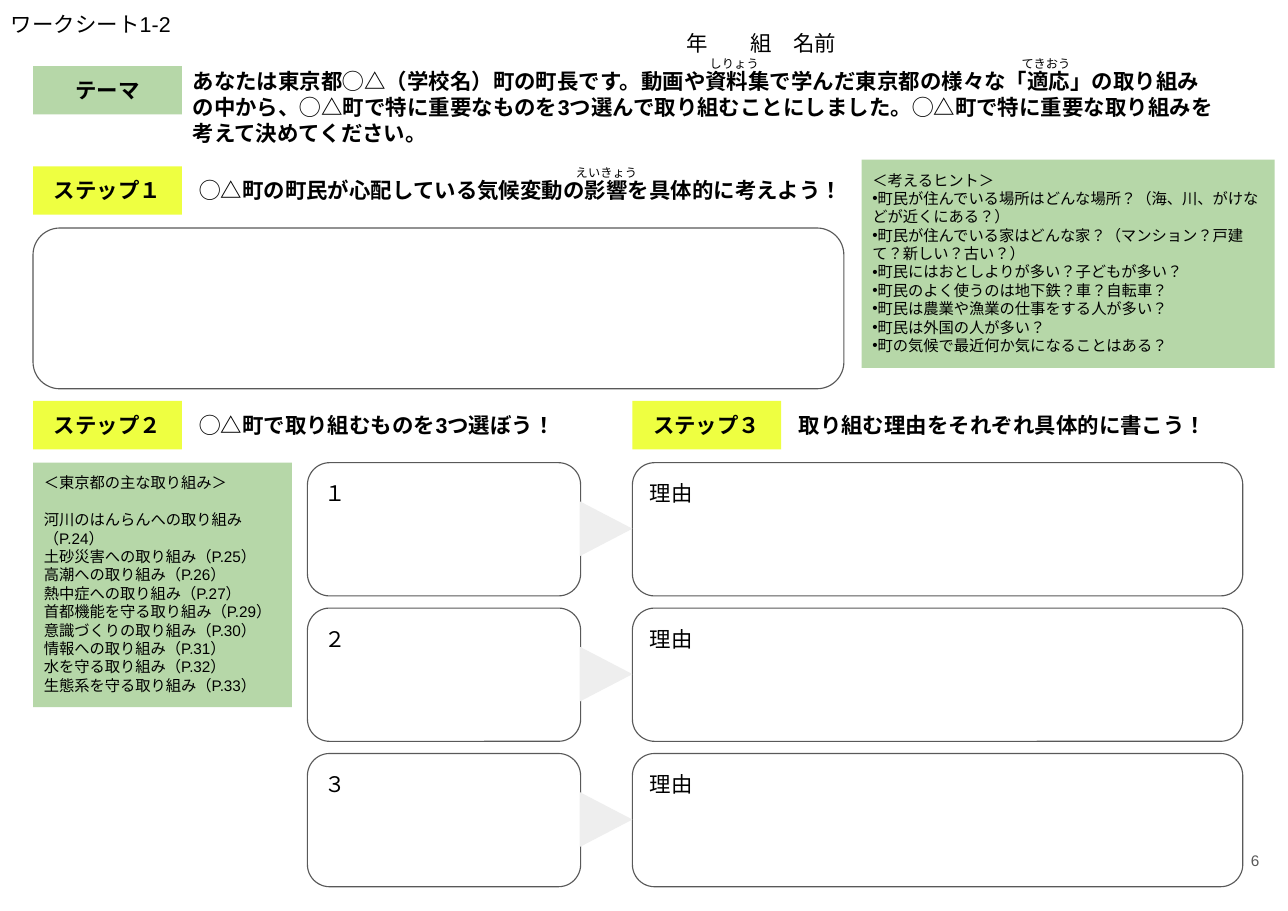
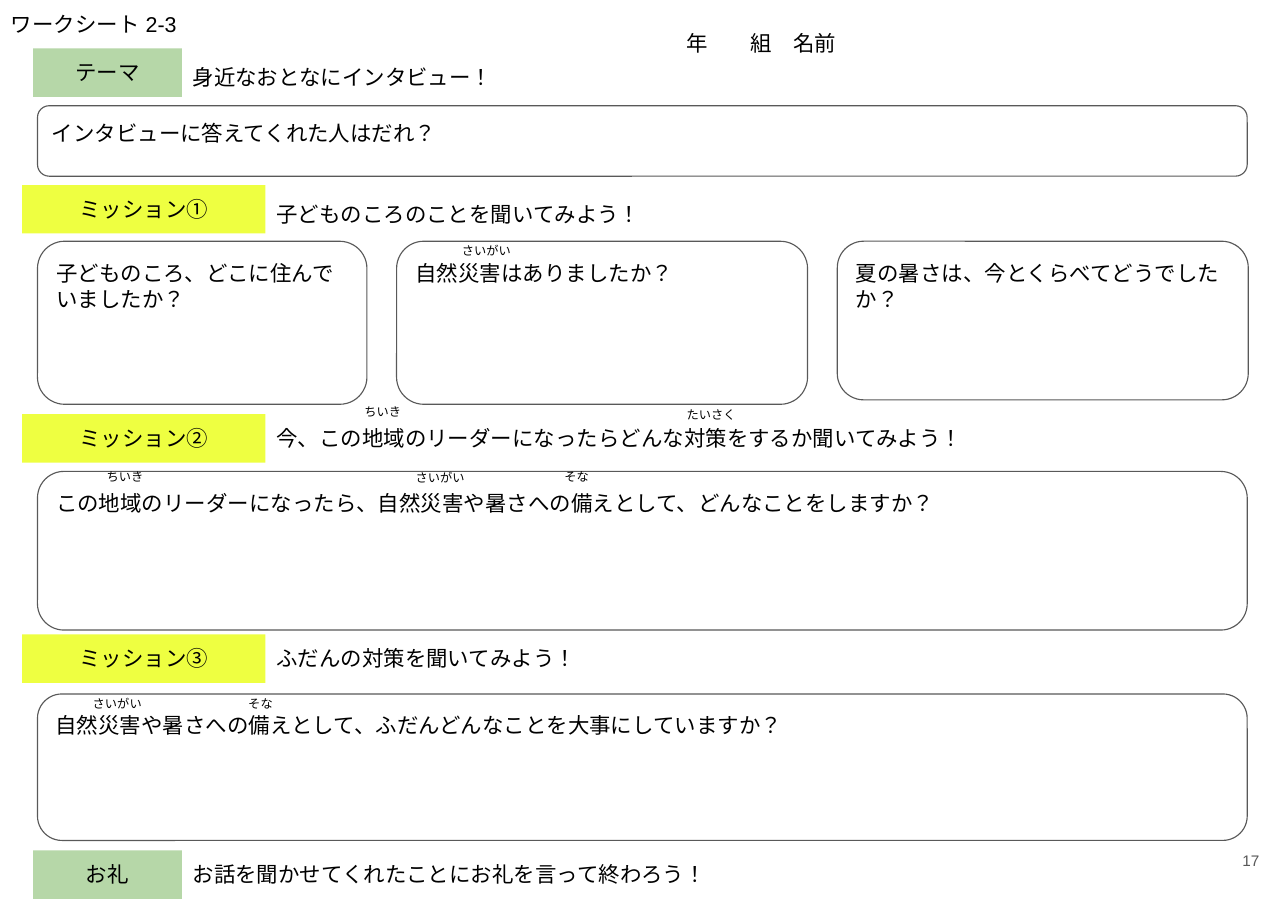
from lxml import etree
from pptx import Presentation
from pptx.dml.color import RGBColor as RGB
from pptx.enum.lang import MSO_LANGUAGE_ID as LANG
from pptx.enum.shapes import MSO_SHAPE as SHAPE
from pptx.enum.text import MSO_ANCHOR as ANCHOR, MSO_AUTO_SIZE as AUTO, PP_ALIGN as ALIGN
from pptx.oxml.ns import qn
from pptx.util import Inches, Pt

FONT = "Arial"
COLORS = {
    "paper": "FFFFFF",
    "text": "000000",
    "muted": "595959",
    "green": "B6D7A8",
    "yellow": "EEFF41",
    "arrow": "EEEEEE",
}
LINE_H = 0.44
TAG_X, TAG_W = 0.3, 1.35
MISSION_X, MISSION_W = 0.2, 2.21

HINTS = [
    "町民が住んでいる場所はどんな場所？（海、川、がけなどが近くにある？）",
    "町民が住んでいる家はどんな家？（マンション？戸建て？新しい？古い？）",
    "町民にはおとしよりが多い？子どもが多い？",
    "町民のよく使うのは地下鉄？車？自転車？",
    "町民は農業や漁業の仕事をする人が多い？",
    "町民は外国の人が多い？",
    "町の気候で最近何か気になることはある？",
]
EFFORTS = [
    "河川のはんらんへの取り組み（P.24）",
    "土砂災害への取り組み（P.25）",
    "高潮への取り組み（P.26）",
    "熱中症への取り組み（P.27）",
    "首都機能を守る取り組み（P.29）",
    "意識づくりの取り組み（P.30）",
    "情報への取り組み（P.31）",
    "水を守る取り組み（P.32）",
    "生態系を守る取り組み（P.33）",
]


def rgb(name):
    return RGB.from_string(COLORS[name])


def write(sp, lines, size=14, bold=False, align=ALIGN.LEFT, color="text",
          anchor=ANCHOR.TOP, grow=True):
    tf = sp.text_frame
    tf.word_wrap = True
    tf.auto_size = AUTO.SHAPE_TO_FIT_TEXT if grow else AUTO.NONE
    tf.vertical_anchor = anchor
    tf.margin_left = tf.margin_right = tf.margin_top = tf.margin_bottom = Inches(0.1)
    tf.text = "\n".join(lines)
    for p in tf.paragraphs:
        p.alignment = align
        p.font.name = FONT
        p.font.size = Pt(size)
        p.font.bold = bold
        p.font.color.rgb = rgb(color)
        p.font.language_id = LANG.JAPANESE
        etree.SubElement(default_font(p), qn("a:ea"), typeface=FONT)
        for r in p.runs:
            r.font.language_id = LANG.JAPANESE
    return tf.paragraphs


def default_font(p):
    return p._p.get_or_add_pPr().find(qn("a:defRPr"))


def add_bullet(p):
    pPr = p._p.get_or_add_pPr()
    pPr.set("marL", "0")
    pPr.set("indent", "0")
    default_font(p).addprevious(etree.Element(qn("a:buFont"), typeface=FONT))
    default_font(p).addprevious(etree.Element(qn("a:buChar"), char="•"))


def add_tabs(p, stops):
    tabs = etree.Element(qn("a:tabLst"))
    for stop in stops:
        etree.SubElement(tabs, qn("a:tab"), pos=str(Inches(stop)), algn="l")
    default_font(p).addprevious(tabs)


def add_text(slide, x, y, w, text, h=LINE_H, **style):
    sp = slide.shapes.add_textbox(Inches(x), Inches(y), Inches(w), Inches(h))
    return write(sp, [text], **style)


def add_shape(slide, kind, x, y, w, h, fill=None):
    sp = slide.shapes.add_shape(kind, Inches(x), Inches(y), Inches(w), Inches(h))
    sp.shadow.inherit = False
    if fill:
        sp.fill.solid()
        sp.fill.fore_color.rgb = rgb(fill)
        sp.line.fill.background()
    else:
        sp.fill.background()
        sp.line.color.rgb = rgb("muted")
        sp.line.width = Pt(0.75)
    return sp


def add_tag(slide, text, y, fill, x=TAG_X, w=TAG_W, bold=False):
    sp = add_shape(slide, SHAPE.RECTANGLE, x, y, w, LINE_H, fill)
    write(sp, [text], bold=bold, align=ALIGN.CENTER)


def add_frame(slide, x, y, w, h, text=None):
    sp = add_shape(slide, SHAPE.ROUNDED_RECTANGLE, x, y, w, h)
    if text:
        write(sp, [text], grow=False)


def add_arrow(slide, x, y):
    sp = add_shape(slide, SHAPE.ISOSCELES_TRIANGLE, x, y, 0.5, 0.48, "arrow")
    sp.rotation = 90


def add_panel(slide, x, y, w, h, lines):
    sp = add_shape(slide, SHAPE.RECTANGLE, x, y, w, h, "green")
    return write(sp, lines, size=10)


def add_readings(slide, readings):
    for x, y, text in readings:
        add_text(slide, x, y, 1.17, text, h=0.34, size=8, align=ALIGN.CENTER)


def new_worksheet(prs, title, number):
    slide = prs.slides.add_slide(prs.slide_layouts[6])
    slide.background.fill.solid()
    slide.background.fill.fore_color.rgb = rgb("paper")
    add_text(slide, 0, 0, 4.74, title)
    name_line = add_text(slide, 6.13, 0.17, 5.32, "年\t組\t名前")
    add_tabs(name_line[0], [0.58, 0.97])
    add_text(slide, 10.83, 7.5, 0.7, number, h=0.63, size=10, align=ALIGN.RIGHT,
             color="muted", anchor=ANCHOR.MIDDLE, grow=False)
    return slide


def build_planning_sheet(prs):
    slide = new_worksheet(prs, "ワークシート1-2", "6")
    add_tag(slide, "テーマ", 0.6, "green", bold=True)
    add_text(slide, 1.65, 0.52, 9.53,
             "あなたは東京都◯△（学校名）町の町長です。動画や資料集で学んだ東京都の様々な"
             "「適応」の取り組みの中から、◯△町で特に重要なものを3つ選んで取り組むことに"
             "しました。◯△町で特に重要な取り組みを考えて決めてください。",
             h=0.91, bold=True)

    right_x = 5.74
    steps = [
        (TAG_X, 1.51, "ステップ１", 8.67, "◯△町の町民が心配している気候変動の影響を具体的に考えよう！"),
        (TAG_X, 3.64, "ステップ２", 3.9, "◯△町で取り組むものを3つ選ぼう！"),
        (right_x, 3.64, "ステップ３", 4.3, "取り組む理由をそれぞれ具体的に書こう！"),
    ]
    for x, y, step, w, task in steps:
        add_tag(slide, step, y, "yellow", x=x, bold=True)
        add_text(slide, x + TAG_W + 0.06, y, w, task, bold=True)

    add_frame(slide, TAG_X, 2.07, 7.36, 1.46)
    for i, choice in enumerate("１２３"):
        y = 4.2 + 1.32 * i
        add_frame(slide, 2.79, y, 2.48, 1.21, choice)
        add_frame(slide, right_x, y, 5.54, 1.21, "理由")
        add_arrow(slide, 5.25, y + 0.36)

    efforts = add_panel(slide, TAG_X, 4.2, 2.35, 2.22, ["＜東京都の主な取り組み＞", *EFFORTS])
    efforts[0].space_after = Pt(12)
    hints = add_panel(slide, 7.82, 1.45, 3.75, 1.89, ["＜考えるヒント＞", *HINTS])
    for p in hints[1:]:
        add_bullet(p)
    add_readings(slide, [
        (6.08, 0.44, "しりょう"),
        (8.91, 0.44, "てきおう"),
        (4.92, 1.43, "えいきょう"),
    ])


def build_interview_sheet(prs):
    slide = new_worksheet(prs, "ワークシート 2-3", "17")
    for tag, tag_y, text_y, text in [
        ("テーマ", 0.44, 0.48, "身近なおとなにインタビュー！"),
        ("お礼", 7.72, 7.72, "お話を聞かせてくれたことにお礼を言って終わろう！"),
    ]:
        add_tag(slide, tag, tag_y, "green")
        add_text(slide, TAG_X + TAG_W, text_y, 9.53, text)

    for tag, tag_y, text_y, text in [
        ("ミッション①", 1.68, 1.73, "子どものころのことを聞いてみよう！"),
        ("ミッション②", 3.76, 3.76, "今、この地域のリーダーになったらどんな対策をするか聞いてみよう！"),
        ("ミッション③", 5.76, 5.76, "ふだんの対策を聞いてみよう！"),
    ]:
        add_tag(slide, tag, tag_y, "yellow", x=MISSION_X, w=MISSION_W)
        add_text(slide, MISSION_X + MISSION_W, text_y, 8.67, text)

    left, full_w = 0.34, 10.98
    for x, y, w, h, question in [
        (left, 0.96, full_w, 0.64, "インタビューに答えてくれた人はだれ？"),
        (left, 2.19, 2.99, 1.48, "子どものころ、どこに住んでいましたか？"),
        (3.6, 2.19, 3.73, 1.48, "自然災害はありましたか？"),
        (7.6, 2.19, 3.73, 1.44, "夏の暑さは、今とくらべてどうでしたか？"),
        (left, 4.28, full_w, 1.44,
         "この地域のリーダーになったら、自然災害や暑さへの備えとして、どんなことをしますか？"),
        (left, 6.3, full_w, 1.33,
         "自然災害や暑さへの備えとして、ふだんどんなことを大事にしていますか？"),
    ]:
        add_frame(slide, x, y, w, h, question)

    add_readings(slide, [
        (3.83, 2.14, "さいがい"),
        (2.89, 3.6, "ちいき"),
        (5.87, 3.63, "たいさく"),
        (0.55, 4.19, "ちいき"),
        (3.41, 4.2, "さいがい"),
        (4.65, 4.19, "そな"),
        (0.48, 6.25, "さいがい"),
        (1.78, 6.25, "そな"),
    ])


def main():
    prs = Presentation()
    prs.slide_width, prs.slide_height = Inches(11.69), Inches(8.27)
    build_planning_sheet(prs)
    build_interview_sheet(prs)
    prs.save("out.pptx")


if __name__ == "__main__":
    main()
